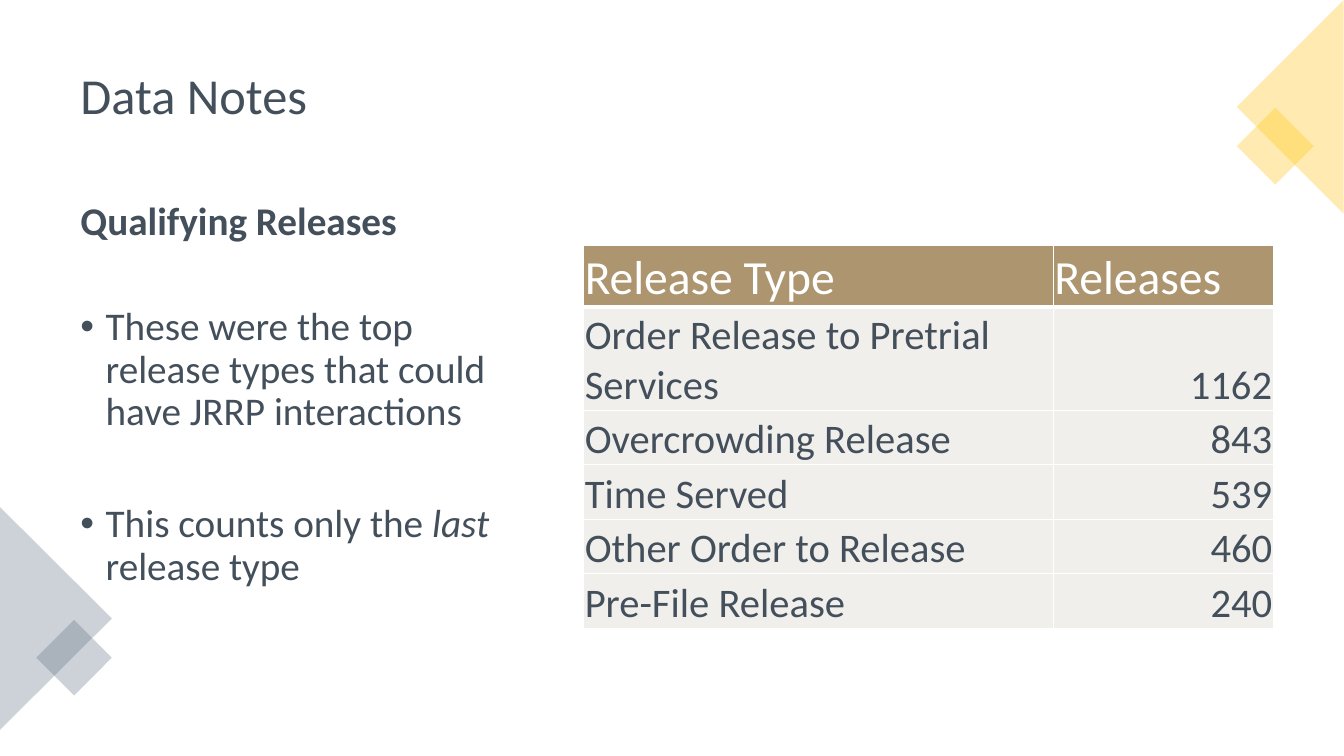
from dataclasses import dataclass

from lxml import etree
from pptx import Presentation
from pptx.dml.color import RGBColor
from pptx.enum.shapes import MSO_SHAPE
from pptx.enum.text import MSO_ANCHOR, PP_ALIGN
from pptx.oxml.ns import qn
from pptx.util import Pt

TRIANGLE = MSO_SHAPE.ISOSCELES_TRIANGLE
SQUARE = MSO_SHAPE.RECTANGLE
MIDDLE, BOTTOM = MSO_ANCHOR.MIDDLE, MSO_ANCHOR.BOTTOM
LEFT, RIGHT = PP_ALIGN.LEFT, PP_ALIGN.RIGHT


@dataclass(frozen=True)
class Theme:
    font: str = "Calibri"
    ink: str = "434F5B"
    white: str = "FFFFFF"
    header: str = "AC956F"
    row: str = "F1EFEB"
    slate: str = "5C6D7E"
    gold: str = "FFC000"
    title_size: int = 36
    body_size: int = 28
    header_size: int = 34
    row_size: int = 29
    opacity: int = 30


THEME = Theme()

RELEASES = [
    ("Release Type", "Releases"),
    ("Order Release to Pretrial Services", "1162"),
    ("Overcrowding Release", "843"),
    ("Time Served", "539"),
    ("Other Order to Release", "460"),
    ("Pre-File Release", "240"),
]
COLUMN_WIDTHS = [335.5, 157]
ROW_HEIGHTS = [44.5, 73.5] + [39] * 4

# Kind, left, top, width, height, rotation, colour
CORNERS = [
    (TRIANGLE, -39.6, 401.8, 159.1, 79.9, 90, THEME.slate),
    (SQUARE, 33.8, 450.7, 38.2, 38.2, 45, THEME.slate),
    (SQUARE, 891.4, 85, 38.9, 38.9, 45, THEME.gold),
    (TRIANGLE, 845.3, 38.2, 152.6, 76.3, 270, THEME.gold),
]


def style(paragraph, size, color=THEME.ink, bold=False):
    font = paragraph.font
    font.name = THEME.font
    font.size = Pt(size)
    font.bold = bold
    font.color.rgb = RGBColor.from_string(color)


def add_text_frame(slide, left, top, width, height):
    frame = slide.shapes.add_textbox(Pt(left), Pt(top), Pt(width), Pt(height)).text_frame
    frame.word_wrap = True
    return frame


def set_bullet(paragraph, indent=18):
    props = paragraph._p.get_or_add_pPr()
    props.set("marL", str(Pt(indent)))
    props.set("indent", str(-Pt(indent)))
    etree.SubElement(props, qn("a:buFont")).set("typeface", "Arial")
    etree.SubElement(props, qn("a:buChar")).set("char", "•")


def add_bullet(frame, space_before, *phrases):
    """Add a bullet from (text, italic) phrases."""
    bullet = frame.add_paragraph()
    bullet.line_spacing = 0.9
    bullet.space_before = Pt(space_before)
    set_bullet(bullet)
    style(bullet, THEME.body_size)
    for text, italic in phrases:
        run = bullet.add_run()
        run.text = text
        if italic:
            run.font.italic = True


def add_corner(slide, kind, left, top, width, height, rotation, color):
    corner = slide.shapes.add_shape(kind, Pt(left), Pt(top), Pt(width), Pt(height))
    corner.rotation = rotation
    corner.shadow.inherit = False
    corner.line.fill.background()
    corner.fill.solid()
    corner.fill.fore_color.rgb = RGBColor.from_string(color)
    tint = corner._element.spPr.find(qn("a:solidFill"))[0]
    etree.SubElement(tint, qn("a:alpha")).set("val", str(THEME.opacity * 1000))


def set_borders(cell, bottom_width):
    props = cell._tc.get_or_add_tcPr()
    for side, width in (("L", 1), ("R", 1), ("T", 1), ("B", bottom_width)):
        border = etree.SubElement(props, qn(f"a:ln{side}"), w=str(Pt(width)))
        fill = etree.SubElement(border, qn("a:solidFill"))
        etree.SubElement(fill, qn("a:srgbClr")).set("val", THEME.white)


def fill_cell(cell, text, is_header, align):
    set_borders(cell, 3 if is_header else 1)
    cell.fill.solid()
    cell.fill.fore_color.rgb = RGBColor.from_string(THEME.header if is_header else THEME.row)
    cell.margin_left = cell.margin_right = cell.margin_top = Pt(0.7)
    cell.margin_bottom = Pt(0)
    cell.vertical_anchor = BOTTOM
    cell.text = text
    paragraph = cell.text_frame.paragraphs[0]
    paragraph.alignment = align
    if is_header:
        style(paragraph, THEME.header_size, THEME.white)
    else:
        style(paragraph, THEME.row_size)


def add_release_table(slide, left, top):
    table = slide.shapes.add_table(
        len(RELEASES), len(COLUMN_WIDTHS), Pt(left), Pt(top),
        Pt(sum(COLUMN_WIDTHS)), Pt(sum(ROW_HEIGHTS))).table
    table.horz_banding = False
    for column, width in zip(table.columns, COLUMN_WIDTHS):
        column.width = Pt(width)
    for r, (release, height) in enumerate(zip(RELEASES, ROW_HEIGHTS)):
        table.rows[r].height = Pt(height)
        for c, text in enumerate(release):
            is_count = r > 0 and c == 1
            fill_cell(table.cell(r, c), text, r == 0, RIGHT if is_count else LEFT)


def main():
    deck = Presentation()
    deck.slide_width, deck.slide_height = Pt(960), Pt(540)
    slide = deck.slides.add_slide(deck.slide_layouts[6])

    # Title
    title = add_text_frame(slide, 50.4, 25.2, 859, 89.3)
    title.vertical_anchor = MIDDLE
    title.text = "Data Notes"
    title.paragraphs[0].line_spacing = 0.9
    style(title.paragraphs[0], THEME.title_size)

    # Notes on the left
    notes = add_text_frame(slide, 50.4, 140.4, 315.4, 346.3)
    notes.text = "Qualifying Releases"
    notes.paragraphs[0].line_spacing = 0.9
    style(notes.paragraphs[0], THEME.body_size, bold=True)
    add_bullet(notes, 45, ("These were the top release types that could have JRRP interactions", False))
    add_bullet(notes, 50, ("This counts only the ", False), ("last", True), (" release type", False))

    # Corner ornaments
    for corner in CORNERS:
        add_corner(slide, *corner)

    # Release counts
    add_release_table(slide, 417, 175)

    deck.save("out.pptx")


if __name__ == "__main__":
    main()
